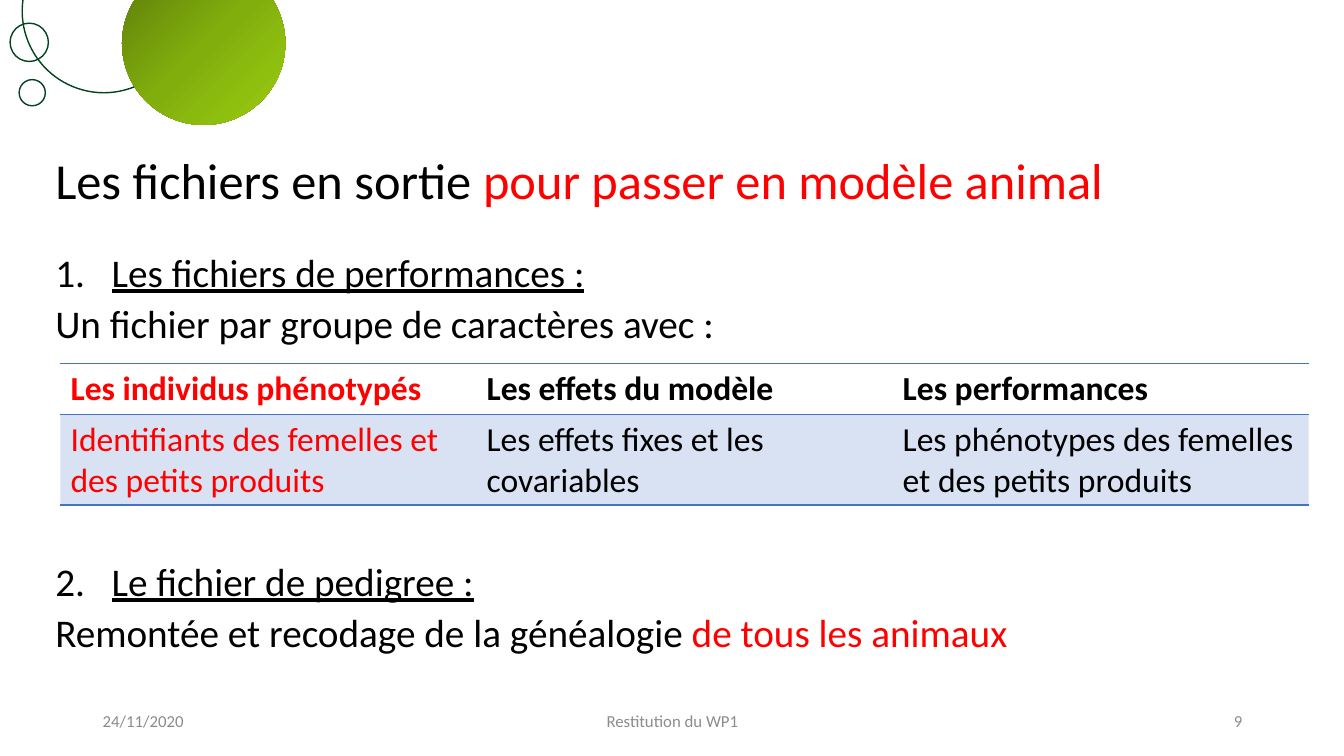
from copy import deepcopy

from lxml import etree
from pptx import Presentation
from pptx import util as u
from pptx.dml.color import RGBColor
from pptx.enum import shapes, text
from pptx.oxml import parse_xml
from pptx.oxml.ns import nsdecls, qn

BLACK, RED, GREY, BLUE, DARK = "000000", "FF0000", "8C8C8C", "4472C4", "01441F"


def rgb(color, value):
    color.rgb = RGBColor.from_string(value)


def write(p, runs, para={}, **font):
    for name, value in para.items():
        setattr(p, name, value)
    for words, color in runs:
        r = p.add_run()
        r.text = words
        rgb(r.font.color, color)
        for name, value in {"name": "Calibri", **font}.items():
            setattr(r.font, name, value)


prs = Presentation()
prs.slide_width, prs.slide_height = u.Inches(13.33), u.Inches(7.5)
s = prs.slides.add_slide(prs.slide_layouts[6])

circles = [
    (0.22, -0.7, 1.62, False),
    (1.21, -0.38, 1.62, True),
    (0.1, 0.23, 0.38, False),
    (0.19, 0.79, 0.26, False),
]
for x, y, d, filled in circles:
    sp = s.shapes.add_shape(shapes.MSO_SHAPE.OVAL, *map(u.Inches, (x, y, d, d)))
    sp.shadow.inherit = False
    if filled:
        sp.fill.gradient()
        sp.fill.gradient_angle = 315
        first = sp.fill._fill._gradFill.gsLst[0]
        first.addnext(deepcopy(first))
        for stop, pos, color in zip(sp.fill.gradient_stops, (0, 0.5, 1), ("5B7A09", "81AD0D", "9ACD10")):
            stop.position = pos
            rgb(stop.color, color)
        sp.line.fill.background()
    else:
        sp.fill.background()
        rgb(sp.line.color, DARK)
        sp.line.width = u.Pt(1)

boxes = {}
for name, at, anchor in [
    ("body", (0.45, 2.5, 12.44, 4.25), text.MSO_ANCHOR.TOP),
    ("title", (0.45, 1.38, 11.5, 0.88), text.MSO_ANCHOR.MIDDLE),
    ("date", (0.92, 6.95, 3, 0.4), text.MSO_ANCHOR.MIDDLE),
    ("footer", (4.42, 6.95, 4.5, 0.4), text.MSO_ANCHOR.MIDDLE),
    ("number", (9.42, 6.95, 3, 0.4), text.MSO_ANCHOR.MIDDLE),
]:
    tf = s.shapes.add_textbox(*map(u.Inches, at)).text_frame
    tf.word_wrap = True
    tf.vertical_anchor = anchor
    boxes[name] = tf

write(
    boxes["title"].paragraphs[0],
    [("Les fichiers en sortie ", BLACK), ("pour passer en modèle animal", RED)],
    {"line_spacing": 0.9},
    size=u.Pt(36),
)

sections = [
    ("Les fichiers de performances :", 10, [("Un fichier par groupe de caractères avec :", BLACK)]),
    (
        "Le fichier de pedigree :",
        157,
        [("Remontée et recodage de la généalogie ", BLACK), ("de tous les animaux", RED)],
    ),
]
tf = boxes["body"]
for i, (heading, gap, detail) in enumerate(sections, 1):
    p = tf.paragraphs[0] if i == 1 else tf.add_paragraph()
    write(p, [(heading, BLACK)], {"line_spacing": 0.8, "space_before": u.Pt(gap)}, size=u.Pt(28), underline=True)
    pPr = p._p.get_or_add_pPr()
    pPr.set("marL", str(u.Inches(0.56)))
    pPr.set("indent", str(-u.Inches(0.56)))
    etree.SubElement(pPr, qn("a:buFont"), typeface="Calibri")
    etree.SubElement(pPr, qn("a:buAutoNum"), type="arabicPeriod", startAt=str(i))
    write(tf.add_paragraph(), detail, {"line_spacing": 0.8, "space_before": u.Pt(10)}, size=u.Pt(28))

for name, words, align in [
    ("date", "24/11/2020", text.PP_ALIGN.LEFT),
    ("footer", "Restitution du WP1", text.PP_ALIGN.CENTER),
    ("number", "9", text.PP_ALIGN.RIGHT),
]:
    write(boxes[name].paragraphs[0], [(words, GREY)], {"alignment": align}, size=u.Pt(12))

rows = [
    ["Les individus phénotypés", "Les effets du modèle", "Les performances"],
    [
        "Identifiants des femelles et des petits produits",
        "Les effets fixes et les covariables",
        "Les phénotypes des femelles et des petits produits",
    ],
]
frame = s.shapes.add_table(2, 3, *map(u.Inches, (0.6, 3.61, 12.38, 1.4)))
table = frame.table
table.first_row = table.horz_banding = False
table._tbl.tblPr.find(qn("a:tableStyleId")).text = "{2D5ABB26-0587-4C30-8999-92F81FD0307C}"
for row, height in zip(table.rows, (0.5, 0.9)):
    row.height = u.Inches(height)
for i, row in enumerate(rows):
    for j, words in enumerate(row):
        cell = table.cell(i, j)
        write(cell.text_frame.paragraphs[0], [(words, BLACK if j else RED)], size=u.Pt(24), bold=i == 0)
        tcPr = cell._tc.get_or_add_tcPr()
        for side in ("lnB",) if i else ("lnT", "lnB"):
            tcPr.append(parse_xml(
                f'<a:{side} {nsdecls("a")} w="12700"><a:solidFill>'
                f'<a:srgbClr val="{BLUE}"/></a:solidFill></a:{side}>'
            ))
        if i:
            cell.fill.solid()
            rgb(cell.fill.fore_color, BLUE)
            etree.SubElement(tcPr.find(qn("a:solidFill"))[0], qn("a:alpha"), val="20000")
        else:
            cell.fill.background()

prs.save("out.pptx")
